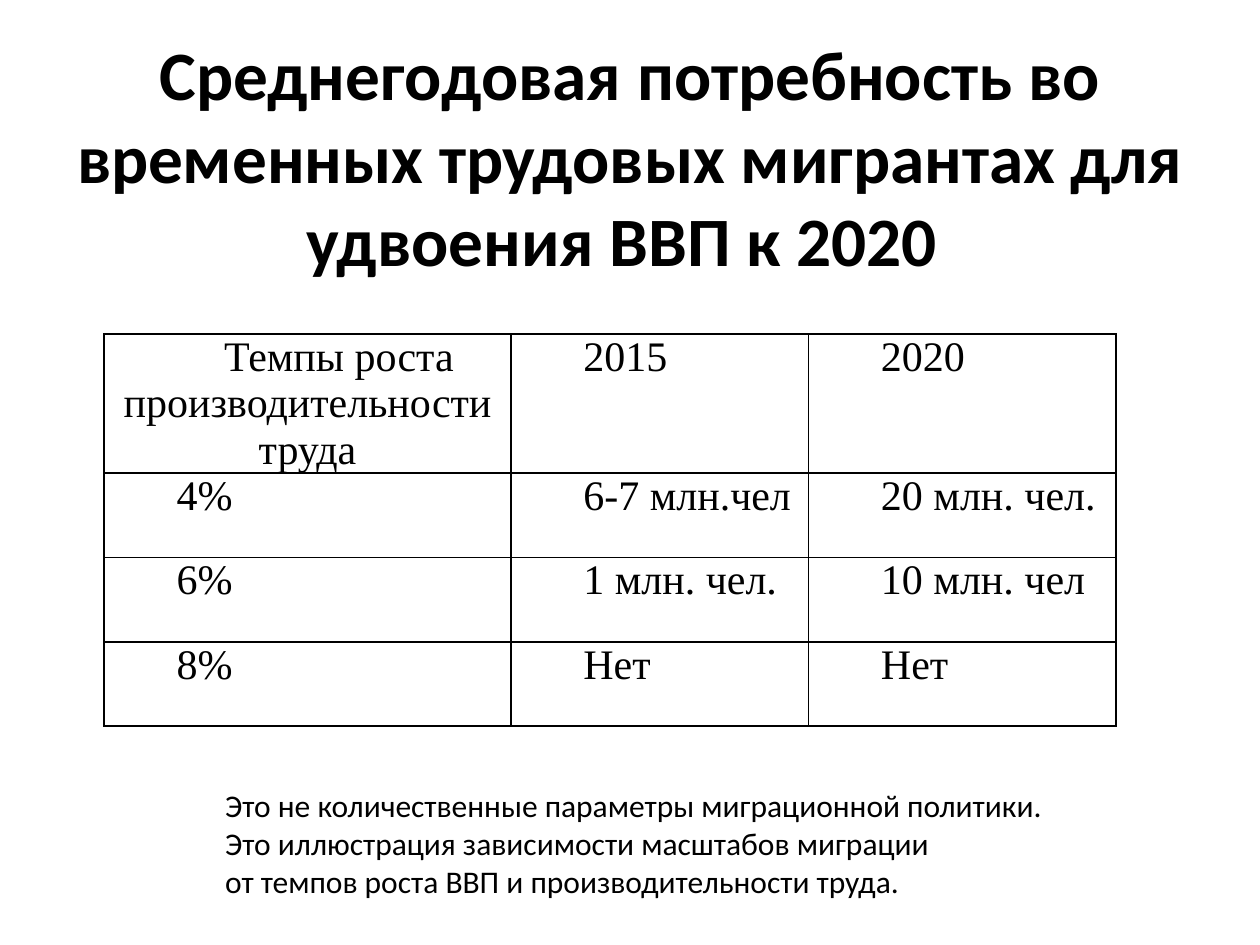
from lxml import etree
from pptx import Presentation
from pptx.dml.color import RGBColor
from pptx.enum.text import MSO_ANCHOR, MSO_AUTO_SIZE, PP_ALIGN
from pptx.oxml.ns import qn
from pptx.util import Cm, Pt

CENTER, JUSTIFY = PP_ALIGN.CENTER, PP_ALIGN.JUSTIFY
MIDDLE = MSO_ANCHOR.MIDDLE
NO_AUTOFIT, GROW = MSO_AUTO_SIZE.NONE, MSO_AUTO_SIZE.SHAPE_TO_FIT_TEXT
TITLE_ONLY = 5
BLACK = "000000"

TITLE = "Среднегодовая потребность во временных трудовых мигрантах для удвоения ВВП к 2020 "
ROWS = [
    ["Темпы роста производительности труда", "2015", "2020"],
    ["4%", "6-7 млн.чел", "20 млн. чел."],
    ["6%", "1 млн. чел. ", "10 млн. чел"],
    ["8%", "Нет", "Нет"],
]
COLUMN_WIDTHS = [Cm(8.2), Cm(6), Cm(6.2)]
ROW_HEIGHT = Cm(1.7)
NOTE = [
    "Это не количественные параметры миграционной политики.",
    "Это иллюстрация зависимости масштабов миграции",
    "от темпов роста ВВП и производительности труда.",
]


def color(hex_value):
    return RGBColor.from_string(hex_value)


def format_text(text_frame, font_name, size, bold=False, alignment=None):
    for paragraph in text_frame.paragraphs:
        paragraph.alignment = alignment
        for run in paragraph.runs:
            run.font.name = font_name
            run.font.size = Pt(size)
            run.font.bold = bold
            run.font.color.rgb = color(BLACK)


def add_title(slide):
    title = slide.shapes.title
    title.left, title.top, title.width, title.height = Cm(1.27), Cm(0.76), Cm(22.86), Cm(4.75)
    text_frame = title.text_frame
    text_frame.text = TITLE
    text_frame.auto_size = NO_AUTOFIT
    text_frame.vertical_anchor = MIDDLE
    format_text(text_frame, "Calibri", 39.6, bold=True, alignment=CENTER)


def add_borders(cell):
    properties = cell._tc.get_or_add_tcPr()
    for position, side in enumerate(("a:lnL", "a:lnR", "a:lnT", "a:lnB")):
        line = etree.Element(qn(side), w=str(Pt(1)))
        fill = etree.SubElement(line, qn("a:solidFill"))
        etree.SubElement(fill, qn("a:srgbClr"), val=BLACK)
        properties.insert(position, line)


def fill_cell(cell, text, alignment):
    cell.margin_left = cell.margin_right = Cm(0.19)
    cell.margin_top = cell.margin_bottom = 0
    cell.fill.background()
    cell.text_frame.text = text
    format_text(cell.text_frame, "Times New Roman", 24, alignment=alignment)
    # First-line indent
    paragraph_properties = cell.text_frame.paragraphs[0]._p.get_or_add_pPr()
    paragraph_properties.set("marL", "0")
    paragraph_properties.set("indent", str(Cm(1.27)))
    add_borders(cell)


def add_migrant_table(slide):
    frame = slide.shapes.add_table(
        len(ROWS), len(COLUMN_WIDTHS), Cm(2.1), Cm(6.73),
        sum(COLUMN_WIDTHS), ROW_HEIGHT * len(ROWS))
    table = frame.table
    table.first_row = table.horz_banding = False
    for column, width in zip(table.columns, COLUMN_WIDTHS):
        column.width = width
    for row_index, texts in enumerate(ROWS):
        table.rows[row_index].height = ROW_HEIGHT
        for column_index, text in enumerate(texts):
            is_corner = row_index == column_index == 0
            fill_cell(table.cell(row_index, column_index), text,
                      CENTER if is_corner else JUSTIFY)


def add_note(slide):
    box = slide.shapes.add_textbox(Cm(4.29), Cm(15.72), Cm(17.17), Cm(2.57))
    text_frame = box.text_frame
    text_frame.text = "\n".join(NOTE)
    text_frame.word_wrap = False
    text_frame.auto_size = GROW
    format_text(text_frame, "Calibri", 18)


def main():
    presentation = Presentation()
    presentation.slide_width, presentation.slide_height = Cm(25.4), Cm(19.05)
    slide = presentation.slides.add_slide(presentation.slide_layouts[TITLE_ONLY])
    add_title(slide)
    add_migrant_table(slide)
    add_note(slide)
    presentation.save("out.pptx")


if __name__ == "__main__":
    main()
